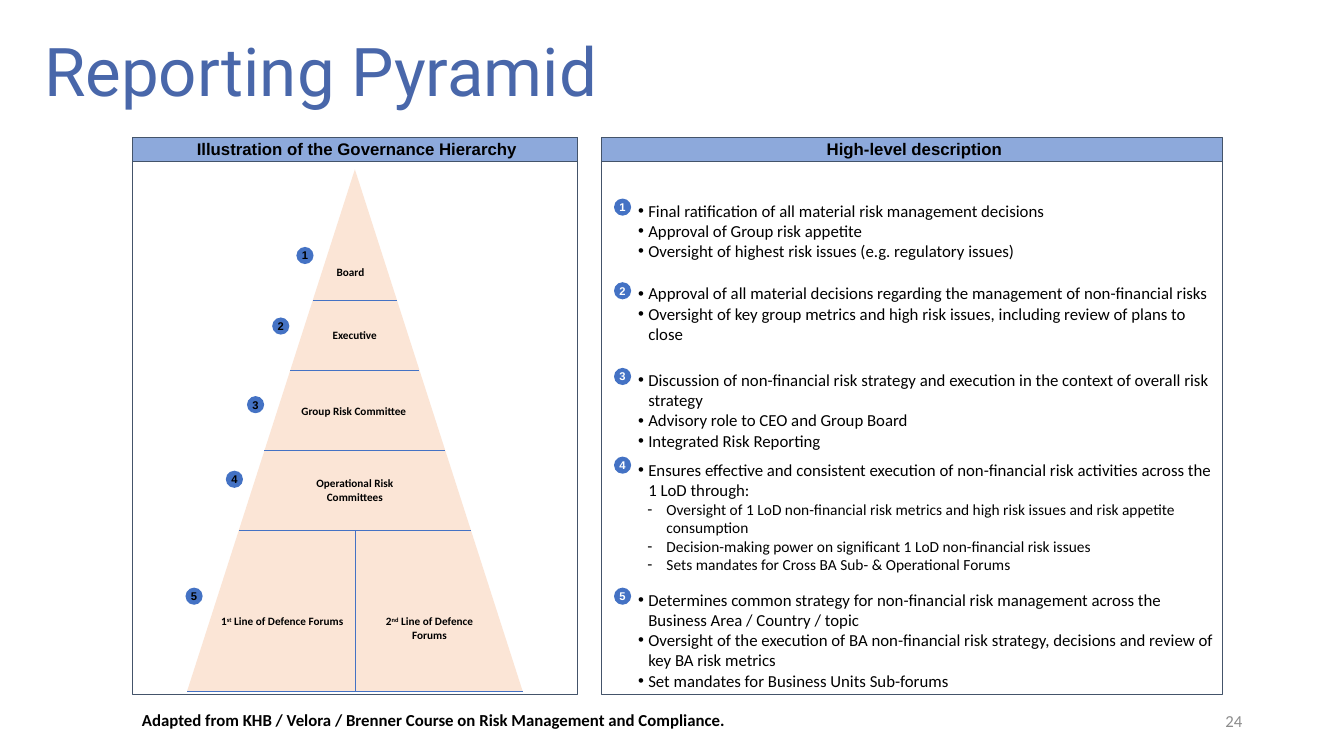
from lxml import etree
from pptx import Presentation
from pptx.dml.color import RGBColor
from pptx.enum.shapes import MSO_CONNECTOR, MSO_SHAPE
from pptx.enum.text import MSO_ANCHOR, PP_ALIGN
from pptx.oxml.ns import qn
from pptx.util import Inches, Pt

BLACK = RGBColor(0x00, 0x00, 0x00)
WHITE = RGBColor(0xFF, 0xFF, 0xFF)
GREY = RGBColor(0x8C, 0x8C, 0x8C)
TITLE_BLUE = RGBColor(0x49, 0x67, 0xAA)
HEADER_BLUE = RGBColor(0x8D, 0xA9, 0xDB)
BLUE = RGBColor(0x44, 0x72, 0xC4)
SLATE = RGBColor(0x44, 0x54, 0x6A)
PEACH = RGBColor(0xFB, 0xE5, 0xD6)

prs = Presentation()
prs.slide_width, prs.slide_height = Inches(13.33), Inches(7.5)
slide = prs.slides.add_slide(prs.slide_layouts[6])


def add_block(box, fill=None, line=None, kind=MSO_SHAPE.RECTANGLE):
    """Add a preset shape without shadow; no fill or line unless given."""
    block = slide.shapes.add_shape(kind, *map(Inches, box))
    block.shadow.inherit = False
    if fill is None:
        block.fill.background()
    else:
        block.fill.solid()
        block.fill.fore_color.rgb = fill
    if line is None:
        block.line.fill.background()
    else:
        block.line.color.rgb = line
        block.line.width = Pt(0.75)
    return block


def write(holder, parts, size, font="Calibri", color=BLACK, bold=False,
          align=PP_ALIGN.LEFT, anchor=MSO_ANCHOR.TOP, insets=(0.1, 0.05, 0.1, 0.05)):
    """Fill a shape, or a new text box at the given place, with one paragraph of runs."""
    if isinstance(holder, tuple):
        holder = slide.shapes.add_textbox(*map(Inches, holder))
    frame = holder.text_frame
    frame.word_wrap = True
    frame.vertical_anchor = anchor
    (frame.margin_left, frame.margin_top,
     frame.margin_right, frame.margin_bottom) = map(Inches, insets)
    paragraph = frame.paragraphs[0]
    paragraph.alignment = align
    for part in parts:
        run = paragraph.add_run()
        run.text = part
        run.font.size, run.font.name, run.font.bold = Pt(size), font, bold
        run.font.color.rgb = color
    return paragraph


# Title and footer
title = write((0.34, 0.02, 11.5, 1.45), ["Reporting Pyramid"], 48, "Roboto", TITLE_BLUE,
              anchor=MSO_ANCHOR.MIDDLE)
title.line_spacing = 0.9
write((9.42, 6.95, 3, 0.4), ["24"], 12, color=GREY, align=PP_ALIGN.RIGHT,
      anchor=MSO_ANCHOR.MIDDLE)
write((1.31, 6.99, 8.89, 0.3),
      ["Adapted from KHB / Velora / Brenner Course on Risk Management and Compliance."],
      12, bold=True)

# Two framed panels
for left, width, heading in [(1.31, 4.42, "Illustration of the Governance Hierarchy"),
                             (5.97, 6.16, "High-level description")]:
    add_block((left, 1.36, width, 5.53), line=SLATE)
    header = add_block((left, 1.36, width, 0.24), HEADER_BLUE, SLATE)
    write(header, [heading], 12, "Arial", bold=True, align=PP_ALIGN.CENTER,
          anchor=MSO_ANCHOR.MIDDLE, insets=(0.04, 0.05, 0, 0.05))

# Pyramid with dividers that run from side to side
APEX_X, APEX_Y, BASE_WIDTH, HEIGHT = 3.52, 1.68, 3.33, 5.18
BASE_Y = APEX_Y + HEIGHT
add_block((APEX_X - BASE_WIDTH / 2, APEX_Y, BASE_WIDTH, HEIGHT), PEACH,
          kind=MSO_SHAPE.ISOSCELES_TRIANGLE)
dividers = [(APEX_X, BASE_Y, APEX_X, 5.26)]
for y in (2.98, 3.67, 4.47, 5.26, BASE_Y):
    half = BASE_WIDTH / 2 * (y - APEX_Y) / HEIGHT
    dividers.append((APEX_X - half, y, APEX_X + half, y))
for ends in dividers:
    divider = slide.shapes.add_connector(MSO_CONNECTOR.STRAIGHT, *map(Inches, ends))
    divider.line.color.rgb = BLUE
    divider.line.width = Pt(0.5)
    etree.SubElement(divider._element.spPr, qn("a:effectLst"))

for box, parts, align in [
    ((3.24, 2.58, 0.53, 0.24), ["Board"], PP_ALIGN.LEFT),
    ((3.2, 3.21, 0.81, 0.24), ["Executive"], PP_ALIGN.LEFT),
    ((2.8, 3.96, 1.42, 0.24), ["Group Risk Committee"], PP_ALIGN.CENTER),
    ((2.81, 4.68, 1.42, 0.37), ["Operational Risk Committees"], PP_ALIGN.CENTER),
    ((2.09, 6.05, 1.42, 0.24), ["1", "st", " Line of Defence Forums"], PP_ALIGN.CENTER),
    ((3.55, 6.05, 1.42, 0.37), ["2", "nd", " Line of Defence Forums"], PP_ALIGN.CENTER),
]:
    label = write(box, parts, 8, bold=True, align=align)
    if len(parts) > 1:
        label.runs[1]._r.get_or_add_rPr().set("baseline", "30000")

# Number badges beside the pyramid and beside the descriptions
pyramid_badges = [(2.94, 2.45), (2.7, 3.15), (2.45, 3.93), (2.24, 4.67), (1.84, 5.83)]
description_badges = [(6.09, y) for y in (1.97, 2.8, 3.65, 4.53, 5.83)]
for places, color in [(pyramid_badges, BLACK), (description_badges, WHITE)]:
    for number, (x, y) in enumerate(places, 1):
        badge = add_block((x, y, 0.17, 0.17), BLUE, kind=MSO_SHAPE.OVAL)
        write(badge, [str(number)], 8, "Arial", color, True, PP_ALIGN.CENTER,
              MSO_ANCHOR.MIDDLE, (0, 0, 0, 0))
        badge.text_frame.word_wrap = False

# Descriptions: (top, height, main points, sub-points)
descriptions = [
    (1.94, 0.34, ["Final ratification of all material risk management decisions",
                  "Approval of Group risk appetite",
                  "Oversight of highest risk issues (e.g. regulatory issues)"], []),
    (2.76, 0.72, ["Approval of all material decisions regarding the management of "
                  "non-financial risks",
                  "Oversight of key group metrics and high risk issues, including review "
                  "of plans to close"], []),
    (3.62, 0.58, ["Discussion of non-financial risk strategy and execution in the context "
                  "of overall risk strategy",
                  "Advisory role to CEO and Group Board",
                  "Integrated Risk Reporting"], []),
    (4.51, 0.97, ["Ensures effective and consistent execution of non-financial risk "
                  "activities across the 1 LoD through:"],
     ["Oversight of 1 LoD non-financial risk metrics and high risk issues and risk "
      "appetite consumption",
      "Decision-making power on significant 1 LoD non-financial risk issues",
      "Sets mandates for Cross BA Sub- & Operational Forums"]),
    (5.8, 0.72, ["Determines common strategy for non-financial risk management across the "
                 "Business Area / Country / topic",
                 "Oversight of the execution of BA non-financial risk strategy, decisions "
                 "and review of key BA risk metrics",
                 "Set mandates for Business Units Sub-forums"], []),
]
for top, height, points, sub_points in descriptions:
    description = slide.shapes.add_textbox(*map(Inches, (6.29, top, 5.83, height)))
    frame = description.text_frame
    frame.word_wrap = True
    frame.margin_left = frame.margin_right = Inches(0.04)
    frame.text = "\n".join(points + sub_points)
    for index, point in enumerate(frame.paragraphs):
        is_main = index < len(points)
        bullet, size, indent, hang = ("•", 12, 0.1, 0.1) if is_main else ("-", 11, 0.28, 0.19)
        point.runs[0].font.size = Pt(size)
        point.runs[0].font.name = "Calibri"
        point.runs[0].font.color.rgb = BLACK
        properties = point._p.get_or_add_pPr()
        properties.set("marL", str(Inches(indent)))
        properties.set("indent", str(-Inches(hang)))
        etree.SubElement(properties, qn("a:buFont"), typeface="Arial")
        etree.SubElement(properties, qn("a:buChar"), char=bullet)

prs.save("out.pptx")
